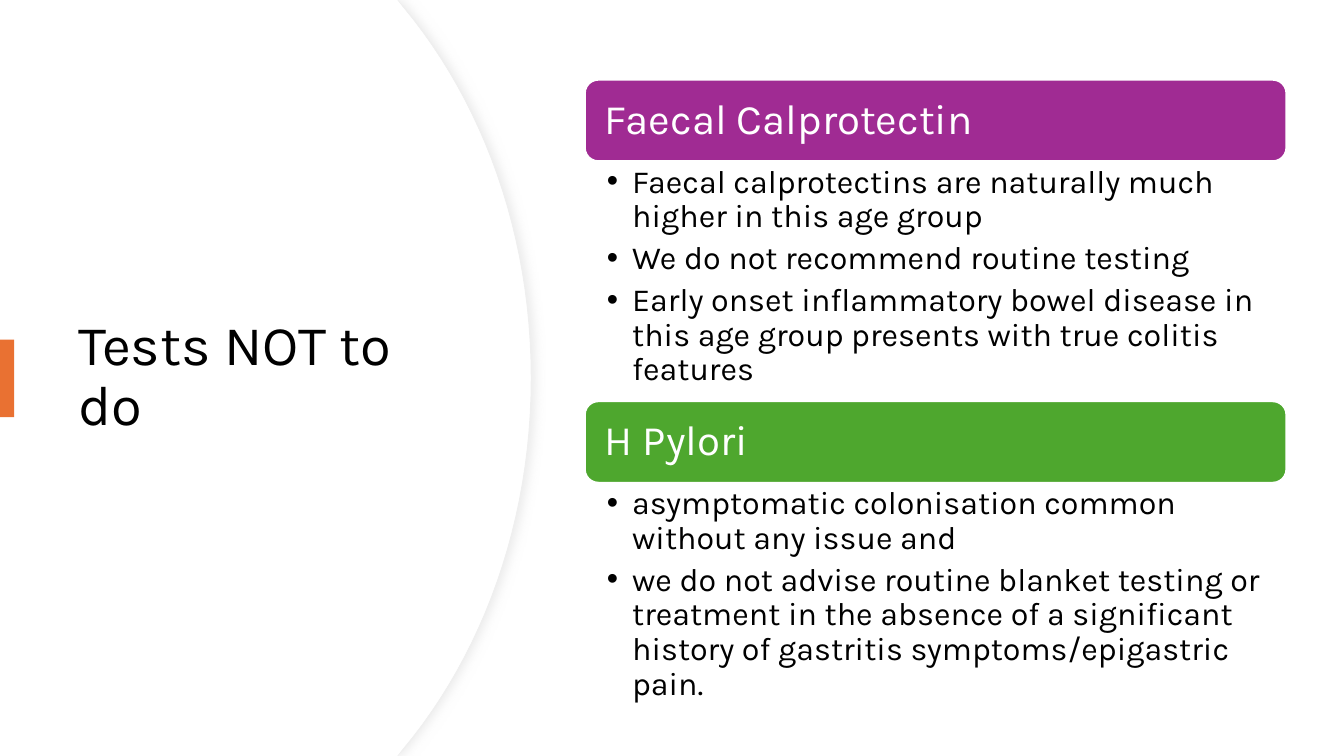
from dataclasses import dataclass

from lxml import etree
from pptx import Presentation
from pptx.dml.color import RGBColor
from pptx.enum.shapes import MSO_SHAPE
from pptx.enum.text import MSO_ANCHOR, PP_ALIGN
from pptx.oxml.ns import qn
from pptx.util import Pt

RECTANGLE = MSO_SHAPE.RECTANGLE
ROUNDED = MSO_SHAPE.ROUNDED_RECTANGLE
TOP, MIDDLE = MSO_ANCHOR.TOP, MSO_ANCHOR.MIDDLE
LEFT = PP_ALIGN.LEFT
SCALE = 9144
CURVE_STEPS = 24


@dataclass(frozen=True)
class Theme:
    """Colours, font and type sizes of the slide."""
    font: str = "Karla"
    white: str = "FFFFFF"
    black: str = "000000"
    orange: str = "E97132"
    purple: str = "A02B93"
    green: str = "4EA72E"
    outline: str = "EFEFEF"
    shadow: str = "D9D9D9"
    title_size: int = 40
    header_size: int = 30
    body_size: int = 23


def px(length):
    """Turn px into EMU, at 100 px to the inch."""
    return round(length * SCALE)


def curve(start, first, second, end):
    """Return points along a cubic curve, without its start."""
    points = []
    for step in range(1, CURVE_STEPS + 1):
        t = step / CURVE_STEPS
        weights = ((1 - t) ** 3, 3 * t * (1 - t) ** 2, 3 * t * t * (1 - t), t ** 3)
        corners = (start, first, second, end)
        points.append(tuple(sum(weight * corner[axis] for weight, corner in zip(weights, corners))
                            for axis in (0, 1)))
    return points


class SlideBuilder:
    """Draws styled elements on one slide."""

    def __init__(self, slide, theme):
        self.slide = slide
        self.theme = theme

    def paint(self, shape, fill, line=None, line_width=0.75):
        """Set fill and outline, and drop the shadow."""
        shape.shadow.inherit = False
        shape.fill.solid()
        shape.fill.fore_color.rgb = RGBColor.from_string(fill)
        if line:
            shape.line.color.rgb = RGBColor.from_string(line)
            shape.line.width = Pt(line_width)
        else:
            shape.line.fill.background()

    def block(self, preset, box, fill, line=None, line_width=0.75):
        """Add a filled preset shape."""
        shape = self.slide.shapes.add_shape(preset, *map(px, box))
        self.paint(shape, fill, line, line_width)
        return shape

    def curved_panel(self, right, line=None):
        """Add the left panel whose right side bulges out to the given px."""
        shoulder, control = right - 126, right - 48
        points = [(394, 0), (shoulder, 8)]
        points += curve((shoulder, 8), (control, 102), (right, 232), (right, 375))
        points += curve((right, 375), (right, 518), (control, 648), (shoulder, 742))
        points += [(394, 750), (0, 750)]
        builder = self.slide.shapes.build_freeform(0, 0, 1.0)
        builder.add_line_segments([(px(x), px(y)) for x, y in points], close=True)
        shape = builder.convert_to_shape()
        self.paint(shape, self.theme.white, line)
        return shape

    def cast_shadow(self, shape):
        """Give a shape a soft shadow to its right."""
        effects = shape._element.spPr.find(qn("a:effectLst"))
        shadow = etree.SubElement(effects, qn("a:outerShdw"), blurRad=str(Pt(7)),
                                  dist=str(Pt(3)), dir="0", algn="l", rotWithShape="0")
        color = etree.SubElement(shadow, qn("a:srgbClr"), val=self.theme.shadow)
        etree.SubElement(color, qn("a:alpha"), val="50000")

    def set_text(self, shape, lines, size, color, anchor, insets):
        """Fill a shape with left-aligned paragraphs."""
        frame = shape.text_frame
        frame.word_wrap = True
        frame.vertical_anchor = anchor
        frame.margin_left, frame.margin_top, frame.margin_right, frame.margin_bottom = map(px, insets)
        frame.text = "\n".join(lines)
        for paragraph in frame.paragraphs:
            paragraph.alignment = LEFT
            paragraph.line_spacing = 0.9
            for run in paragraph.runs:
                run.font.name = self.theme.font
                run.font.size = Pt(size)
                run.font.color.rgb = RGBColor.from_string(color)

    def title(self, box, text):
        """Add the slide title."""
        shape = self.slide.shapes.add_textbox(*map(px, box))
        self.set_text(shape, [text], self.theme.title_size, self.theme.black, MIDDLE, (10, 5, 10, 5))

    def header(self, box, text, fill):
        """Add a coloured section header."""
        shape = self.block(ROUNDED, box, fill, self.theme.white, 1.5)
        self.set_text(shape, [text], self.theme.header_size, self.theme.white, MIDDLE, (16, 16, 16, 16))

    def bullets(self, box, lines):
        """Add a bulleted list."""
        shape = self.slide.shapes.add_textbox(*map(px, box))
        self.set_text(shape, lines, self.theme.body_size, self.theme.black, TOP, (22, 4, 23, 4))
        for paragraph in shape.text_frame.paragraphs:
            paragraph.level = 1
            paragraph.space_after = Pt(5)
            properties = paragraph._p.get_or_add_pPr()
            properties.set("marL", str(px(25)))
            properties.set("indent", str(px(-25)))
            etree.SubElement(properties, qn("a:buFont"), typeface="Arial")
            etree.SubElement(properties, qn("a:buChar"), char="•")


def main():
    """Build the slide and save it."""
    theme = Theme()
    presentation = Presentation()
    presentation.slide_width, presentation.slide_height = px(1333), px(750)
    slide = presentation.slides.add_slide(presentation.slide_layouts[6])
    builder = SlideBuilder(slide, theme)

    builder.cast_shadow(builder.curved_panel(527, theme.outline))
    builder.curved_panel(526)
    builder.title((68, 127, 394, 495), "Tests NOT to do")
    builder.block(RECTANGLE, (0, 337, 14, 77), theme.orange)

    sections = [
        ("Faecal Calprotectin", theme.purple, 238, [
            "Faecal calprotectins are naturally much higher in this age group",
            "We do not recommend routine testing",
            "Early onset inflammatory bowel disease in this age group presents with true colitis features",
        ]),
        ("H Pylori", theme.green, 194, [
            "asymptomatic colonisation common without any issue and",
            "we do not advise routine blanket testing or treatment in the absence of a significant "
            "history of gastritis symptoms/epigastric pain.",
        ]),
    ]
    left, top, width, header_height = 580, 79, 696, 81
    for heading, fill, body_height, lines in sections:
        builder.header((left, top, width, header_height), heading, fill)
        top += header_height
        builder.bullets((left, top, width, body_height), lines)
        top += body_height

    presentation.save("out.pptx")


if __name__ == "__main__":
    main()
